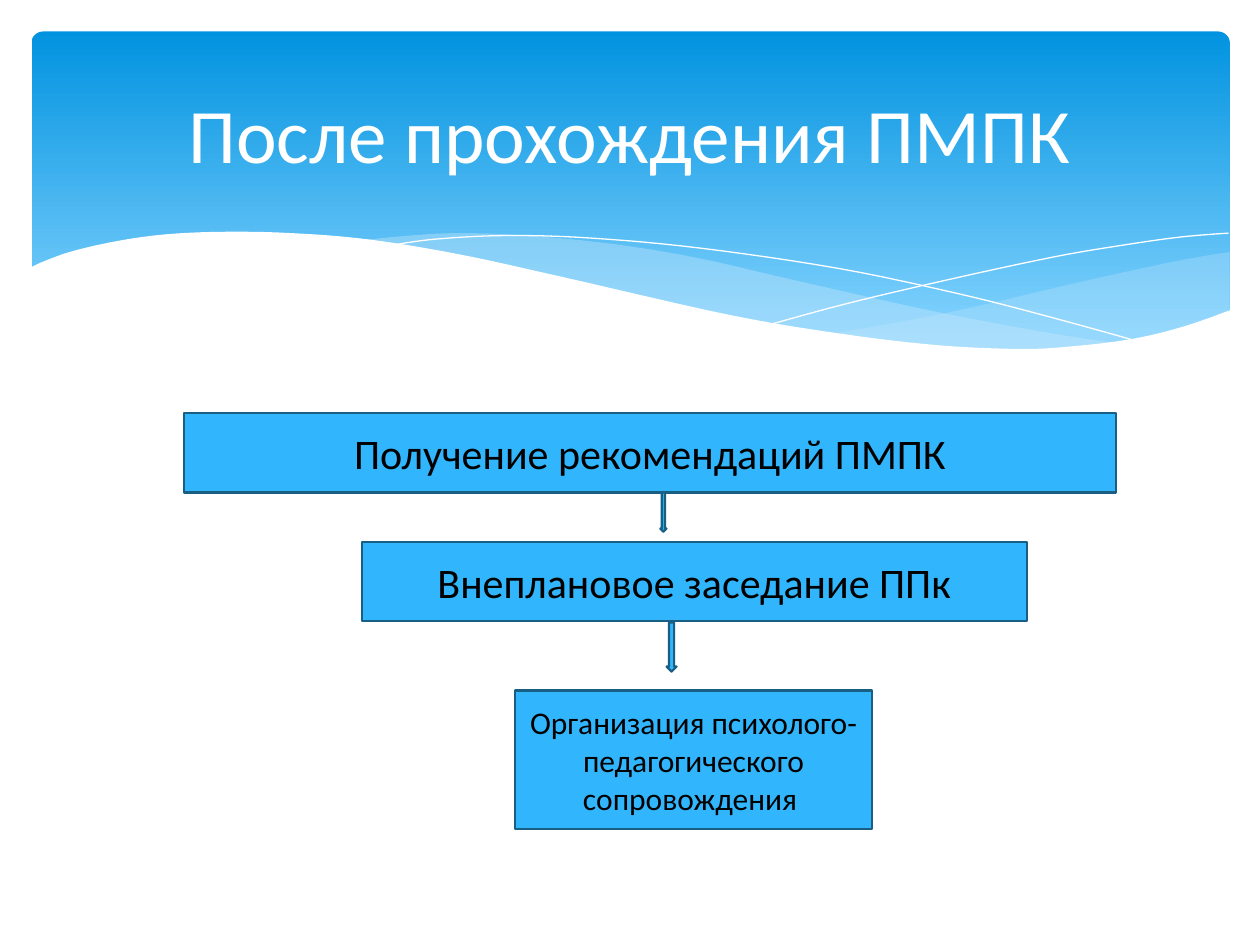
from lxml import etree
from pptx import Presentation
from pptx.dml.color import RGBColor
from pptx.enum.shapes import MSO_SHAPE
from pptx.enum.text import MSO_ANCHOR, PP_ALIGN
from pptx.oxml.ns import qn
from pptx.util import Inches, Pt

RECT = MSO_SHAPE.RECTANGLE
ROUND = MSO_SHAPE.ROUNDED_RECTANGLE
DOWN = MSO_SHAPE.DOWN_ARROW
MIDDLE, CENTER = MSO_ANCHOR.MIDDLE, PP_ALIGN.CENTER

WIDE, HIGH = 10, 7.5
THEME = {
    "font": "Calibri", "head": 44, "step": 24, "last": 18, "edge": 1.25,
    "white": "FFFFFF", "black": "000000", "box": "31B6FD", "rim": "195F84",
    "top": "0293E0", "low": "83D3FE", "wave": "C6E7FC",
}

# Content: text, type size, place (left, top, width, height)
TITLE = "После прохождения ПМПК"
STEPS = [
    ("Получение рекомендаций ПМПК", "step", (1.46, 3.28, 7.4, 0.63)),
    ("Внеплановое заседание ППк", "step", (2.87, 4.3, 5.28, 0.63)),
    ("Организация психолого-педагогического сопровождения ", "last",
     (4.09, 5.48, 2.83, 1.1)),
]
ARROWS = [(5.24, 3.91, 0.05, 0.31), (5.29, 4.94, 0.08, 0.39)]

# Waves: each is a list of smooth edges, given by the points they pass
TINTS = [
    (29, [[(9.76, 2), (9.35, 2.07), (8.61, 2.23), (7.53, 2.48), (6.61, 2.65)],
          [(6.61, 2.65), (7.19, 2.72), (7.69, 2.77), (8.14, 2.78),
           (8.63, 2.75), (9.13, 2.67), (9.49, 2.57), (9.76, 2.47)]]),
    (40, [[(8.93, 2.73), (8.37, 2.65), (7.41, 2.47), (6.29, 2.22),
           (5.55, 2.05), (4.89, 1.94), (4.2, 1.87), (3.61, 1.85),
           (3.13, 1.88), (2.86, 1.91)],
          [(2.86, 1.91), (3.62, 2.03), (4.49, 2.22), (5.3, 2.4),
           (6.18, 2.58), (6.95, 2.7), (7.61, 2.77), (8.18, 2.78),
           (8.67, 2.76), (8.93, 2.73)]]),
]
LINES = [
    [(3.09, 1.95), (3.44, 1.9), (4.01, 1.87), (4.69, 1.89), (5.56, 1.97),
     (6.65, 2.13), (7.6, 2.33), (8.31, 2.51), (9.07, 2.72)],
    [(6.13, 2.57), (6.72, 2.41), (7.48, 2.23), (8.36, 2.04), (8.95, 1.94),
     (9.38, 1.88), (9.75, 1.85)],
]
COVER = [
    [(9.77, 2.46), (9.4, 2.59), (8.99, 2.69), (8.5, 2.75), (8.09, 2.77),
     (7.44, 2.74), (6.68, 2.65), (5.79, 2.5), (4.47, 2.2), (3.65, 2.02),
     (2.92, 1.9), (2.3, 1.85), (1.77, 1.84), (1.32, 1.86), (0.95, 1.91),
     (0.59, 1.99), (0.36, 2.07), (0.23, 2.13)],
    [(0.23, 3.29), (9.77, 3.29)],
]


def color(name):
    return RGBColor.from_string(THEME[name])


def smooth(edge, cuts=6):
    """Points of a Catmull-Rom curve through the edge."""
    pad = [edge[0], *edge, edge[-1]]
    out = [edge[0]]
    for a, b, c, d in zip(pad, pad[1:], pad[2:], pad[3:]):
        for i in range(1, cuts + 1):
            t = i / cuts
            out.append(tuple(
                q + t * (r - p) / 2
                + t * t * (2 * p - 5 * q + 4 * r - s) / 2
                + t ** 3 * (3 * q - p - 3 * r + s) / 2
                for p, q, r, s in zip(a, b, c, d)))
    return out


def draw(shapes, edges, close=True):
    dots = [(Inches(x), Inches(y)) for e in edges for x, y in smooth(e)]
    pen = shapes.build_freeform(*dots[0], scale=1.0)
    pen.add_line_segments(dots[1:], close=close)
    form = pen.convert_to_shape()
    form.shadow.inherit = False
    return form


def paint(form, name):
    form.fill.solid()
    form.fill.fore_color.rgb = color(name)
    form.line.fill.background()


def add(shapes, kind, place):
    form = shapes.add_shape(kind, *map(Inches, place))
    form.shadow.inherit = False
    return form


def block(shapes, kind, place):
    form = add(shapes, kind, place)
    paint(form, "box")
    form.line.color.rgb = color("rim")
    form.line.width = Pt(THEME["edge"])
    return form


def write(form, text, size, ink):
    frame = form.text_frame
    frame.text = text
    frame.word_wrap = True
    frame.vertical_anchor = MIDDLE
    para = frame.paragraphs[0]
    para.alignment = CENTER
    font = para.runs[0].font
    font.name, font.size = THEME["font"], Pt(THEME[size])
    font.color.rgb = color(ink)


def main():
    deck = Presentation()
    deck.slide_width, deck.slide_height = Inches(WIDE), Inches(HIGH)
    shapes = deck.slides.add_slide(deck.slide_layouts[6]).shapes

    # Banner
    band = add(shapes, ROUND, (0.25, 0.25, 9.51, 2.7))
    band.adjustments[0] = 0.034
    band.line.fill.background()
    band.fill.gradient()
    band.fill.gradient_angle = 270
    for stop, name, spot in zip(band.fill.gradient_stops,
                                ("top", "low"), (0, 0.9)):
        stop.color.rgb, stop.position = color(name), spot

    # Waves
    for share, edges in TINTS:
        form = draw(shapes, edges)
        paint(form, "wave")
        tint = form.fill._xPr.find(".//" + qn("a:srgbClr"))
        etree.SubElement(tint, qn("a:alpha"), val=str(share * 1000))
    for edge in LINES:
        form = draw(shapes, [edge], close=False)
        form.fill.background()
        form.line.color.rgb = color("white")
        form.line.width = Pt(0)
    paint(draw(shapes, COVER), "white")

    # Title
    head = shapes.add_textbox(*map(Inches, (0.5, 0.37, 9, 1.37)))
    write(head, TITLE, "head", "white")

    # Steps and arrows
    for text, size, place in STEPS:
        write(block(shapes, RECT, place), text, size, "black")
    for place in ARROWS:
        block(shapes, DOWN, place)

    deck.save("out.pptx")


if __name__ == "__main__":
    main()
